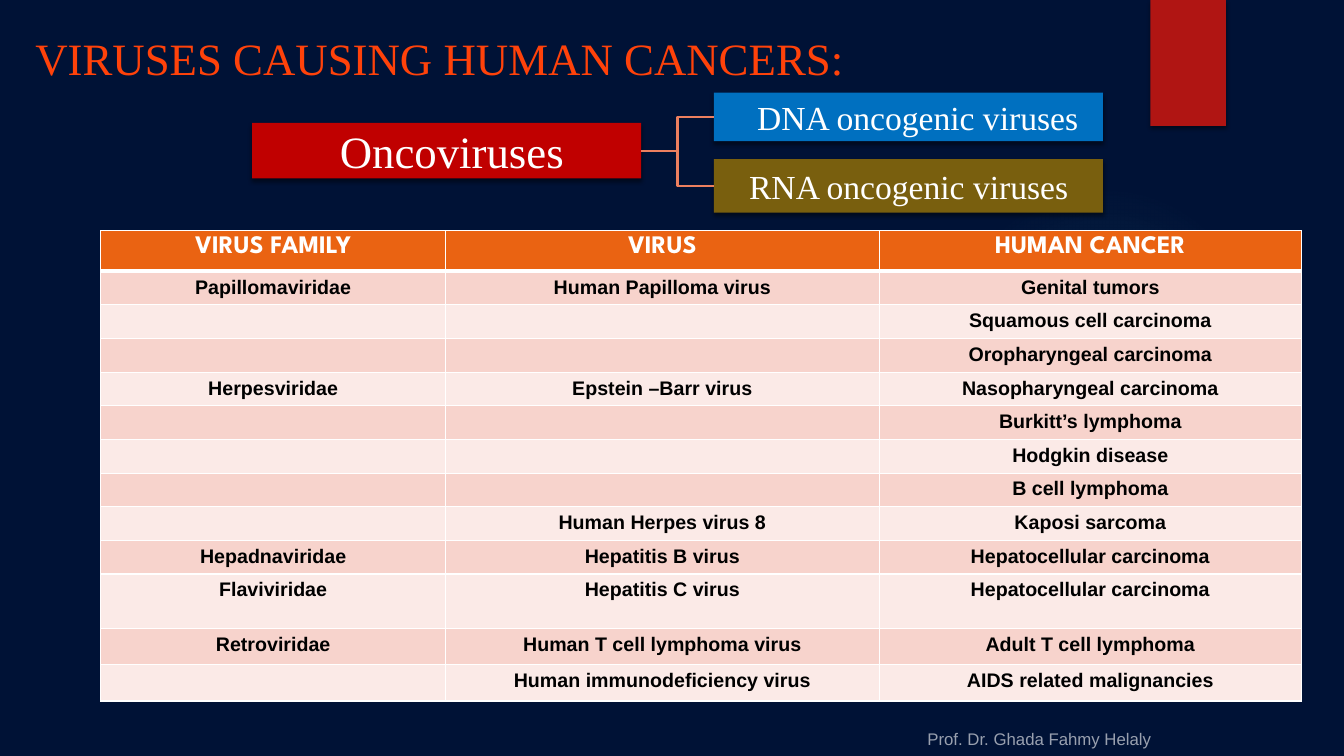
import lxml.etree
import pptx
import pptx.dml.color
import pptx.enum.shapes
import pptx.enum.text
import pptx.oxml
import pptx.oxml.ns
import pptx.util
from pptx.util import Inches

WHITE = "FFFFFF"
SERIF = "Times New Roman"
HEADER_FILL = "EA6312"
BAND_FILLS = ("F7D3CC", "FBEAE7")
COLUMN_WIDTHS = (3.42, 4.3, 4.19)
ROW_HEIGHTS = [0.34] + [0.32] * 9 + [0.54, 0.36, 0.36]
ROWS = [
    ("VIRUS FAMILY", "VIRUS", "HUMAN CANCER"),
    ("Papillomaviridae", "Human Papilloma virus", "Genital tumors"),
    ("", "", "Squamous cell carcinoma"),
    ("", "", "Oropharyngeal carcinoma"),
    ("Herpesviridae", "Epstein –Barr virus", "Nasopharyngeal carcinoma"),
    ("", "", "Burkitt’s lymphoma"),
    ("", "", "Hodgkin disease"),
    ("", "", "B cell lymphoma"),
    ("", "Human Herpes virus 8", "Kaposi sarcoma"),
    ("Hepadnaviridae", "Hepatitis B virus", "Hepatocellular carcinoma"),
    ("Flaviviridae", "Hepatitis C virus", "Hepatocellular carcinoma"),
    ("Retroviridae", "Human T cell lymphoma virus", "Adult T cell lymphoma"),
    ("", "Human immunodeficiency virus", "AIDS related malignancies"),
]


def color(value):
    return pptx.dml.color.RGBColor.from_string(value)


def xml(text):
    return pptx.oxml.parse_xml(text.replace(">", " " + pptx.oxml.ns.nsdecls("a") + ">", 1))


def set_text(text_frame, text, size, font, text_color, anchor, bold=False):
    text_frame.text = text
    text_frame.word_wrap = True
    text_frame.vertical_anchor = anchor
    paragraph = text_frame.paragraphs[0]
    paragraph.alignment = pptx.enum.text.PP_ALIGN.LEFT
    for run in paragraph.runs:
        run.font.size = pptx.util.Pt(size)
        run.font.name = font
        run.font.bold = bold
        run.font.color.rgb = color(text_color)


def add_shadow(shape):
    shape.shadow.inherit = False
    effects = shape._element.spPr.find(pptx.oxml.ns.qn("a:effectLst"))
    effects.append(xml(
        '<a:outerShdw blurRad="38100" dist="25400" dir="5400000" rotWithShape="0">'
        '<a:srgbClr val="000000"><a:alpha val="45000"/></a:srgbClr></a:outerShdw>'))


def add_box(slide, left, top, width, height, fill):
    box = slide.shapes.add_shape(
        pptx.enum.shapes.MSO_SHAPE.RECTANGLE,
        Inches(left), Inches(top), Inches(width), Inches(height))
    box.fill.solid()
    box.fill.fore_color.rgb = color(fill)
    box.line.fill.background()
    add_shadow(box)
    return box


def add_virus_box(slide, left, top, height, fill, text, size, indent):
    box = add_box(slide, left, top, 3.86, height, fill)
    frame = box.text_frame
    set_text(frame, text, size, SERIF, WHITE, pptx.enum.text.MSO_ANCHOR.MIDDLE)
    frame.margin_left = Inches(indent)
    frame.margin_right = frame.margin_top = frame.margin_bottom = Inches(0.02)
    return box


def add_glow(slide):
    glow = slide.shapes.add_shape(
        pptx.enum.shapes.MSO_SHAPE.OVAL, Inches(9.41), Inches(1.83), Inches(3.08), Inches(3.08))
    glow.shadow.inherit = False
    glow.line.fill.background()
    stops = "".join(
        f'<a:gs pos="{position}000"><a:srgbClr val="50B9C1"><a:alpha val="{alpha}000"/></a:srgbClr></a:gs>'
        for position, alpha in ((0, 7), (36, 6), (69, 0)))
    glow._element.spPr.find(pptx.oxml.ns.qn("a:prstGeom")).addnext(xml(
        f'<a:gradFill><a:gsLst>{stops}</a:gsLst><a:path path="circle">'
        '<a:fillToRect l="50000" t="50000" r="50000" b="50000"/></a:path></a:gradFill>'))


def link(slide, parent, child):
    connector = slide.shapes.add_connector(
        pptx.enum.shapes.MSO_CONNECTOR.ELBOW, 0, 0, 0, 0)
    connector.begin_connect(parent, 3)
    connector.end_connect(child, 1)
    connector.line.color.rgb = color("EC7F5F")
    connector.line.width = pptx.util.Pt(1.5)
    connector._element.spPr.append(xml("<a:effectLst></a:effectLst>"))


def format_cell(cell, text, is_header, fill):
    size, font, text_color = (18, "League Spartan", WHITE) if is_header else (14, "Arial", "000000")
    set_text(cell.text_frame, text, size, font, text_color,
             pptx.enum.text.MSO_ANCHOR.TOP, bold=True)
    paragraph = cell.text_frame.paragraphs[0]
    paragraph.alignment = pptx.enum.text.PP_ALIGN.CENTER
    if not text:
        paragraph._p.append(xml(f'<a:endParaRPr sz="{size}00"></a:endParaRPr>'))
    properties = cell._tc.get_or_add_tcPr()
    for side in "LRTB":
        width = 38100 if is_header and side == "B" else 12700
        properties.append(xml(
            f'<a:ln{side} w="{width}"><a:solidFill><a:srgbClr val="{WHITE}"/></a:solidFill></a:ln{side}>'))
    cell.fill.solid()
    cell.fill.fore_color.rgb = color(fill)


def add_virus_table(slide):
    table = slide.shapes.add_table(
        len(ROWS), len(COLUMN_WIDTHS), Inches(1), Inches(2.29),
        Inches(sum(COLUMN_WIDTHS)), Inches(sum(ROW_HEIGHTS))).table
    for column, width in zip(table.columns, COLUMN_WIDTHS):
        column.width = Inches(width)
    for index, (texts, height) in enumerate(zip(ROWS, ROW_HEIGHTS)):
        table.rows[index].height = Inches(height)
        fill = BAND_FILLS[(index - 1) % 2] if index else HEADER_FILL
        for cell, text in zip(table.rows[index].cells, texts):
            format_cell(cell, text, index == 0, fill)


def add_title(slide, text):
    title = slide.shapes.title
    title.left, title.top = Inches(0.25), Inches(0.25)
    title.width, title.height = Inches(9), Inches(0.92)
    set_text(title.text_frame, text, 32, SERIF, "FF420A", pptx.enum.text.MSO_ANCHOR.TOP)
    title.text_frame.auto_size = pptx.enum.text.MSO_AUTO_SIZE.NONE


def add_author(slide, text):
    author = slide.shapes.add_textbox(Inches(9.1), Inches(7.08), Inches(2.57), Inches(0.4))
    set_text(author.text_frame, text, 12, "Arial", "99A0AF", pptx.enum.text.MSO_ANCHOR.BOTTOM)


def main():
    presentation = pptx.Presentation()
    presentation.slide_width = Inches(13.33)
    presentation.slide_height = Inches(7.5)
    slide = presentation.slides.add_slide(presentation.slide_layouts[5])
    slide.background.fill.solid()
    slide.background.fill.fore_color.rgb = color("001236")

    add_glow(slide)
    add_box(slide, 11.41, 0, 0.75, 1.25, "B01513")
    add_title(slide, "VIRUSES CAUSING HUMAN CANCERS:")
    add_author(slide, "Prof. Dr. Ghada Fahmy Helaly")
    oncoviruses = add_virus_box(slide, 2.5, 1.22, 0.55, "C00000", "Oncoviruses", 32, 0.87)
    dna = add_virus_box(slide, 7.08, 0.92, 0.48, "0070C0", "DNA oncogenic viruses", 24, 0.43)
    rna = add_virus_box(slide, 7.08, 1.58, 0.53, "795F0E", "RNA oncogenic viruses", 24, 0.35)
    link(slide, oncoviruses, dna)
    link(slide, oncoviruses, rna)
    add_virus_table(slide)
    presentation.save("out.pptx")


if __name__ == "__main__":
    main()
